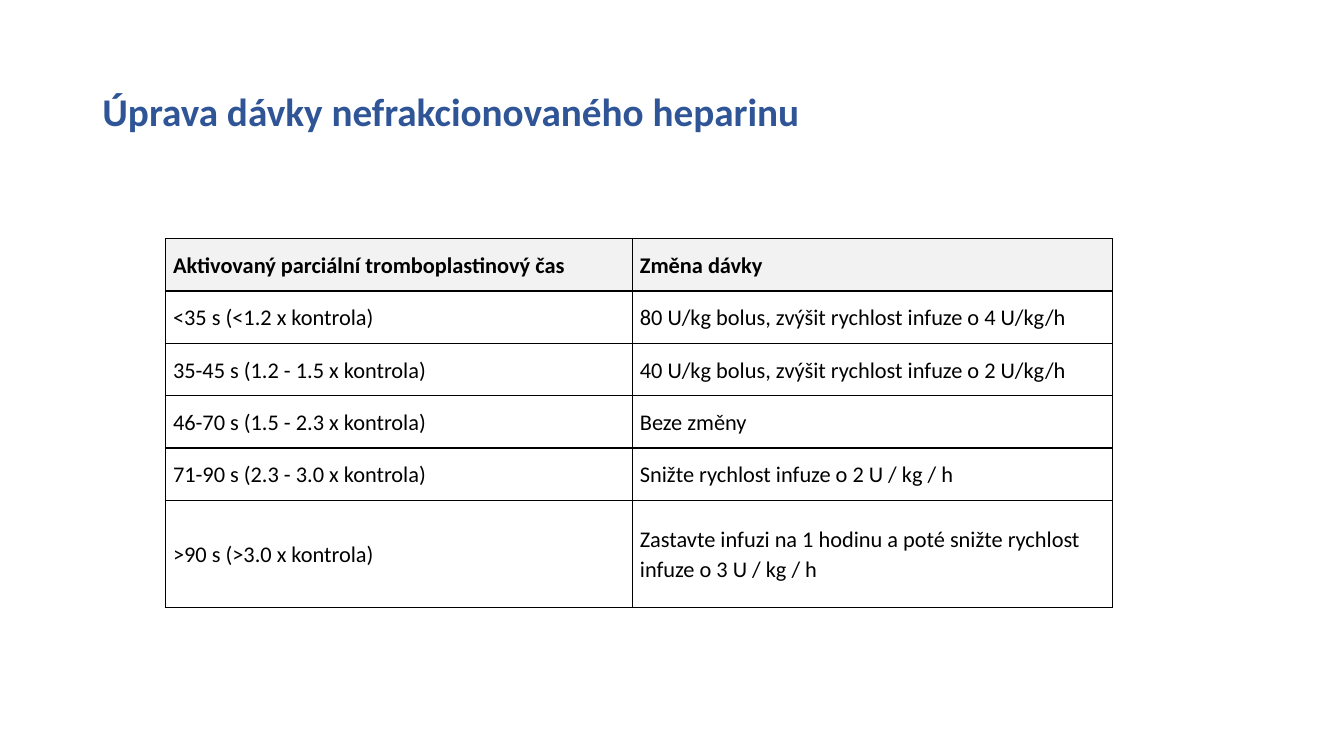
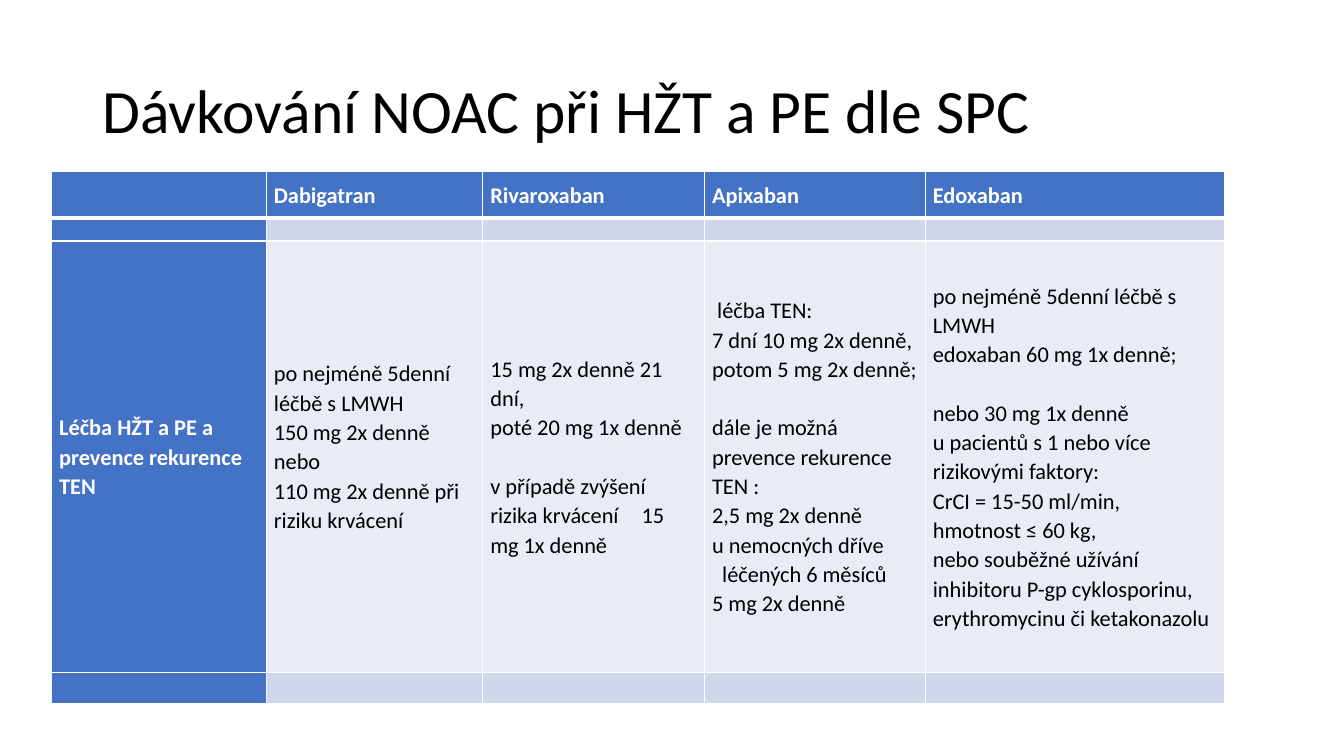
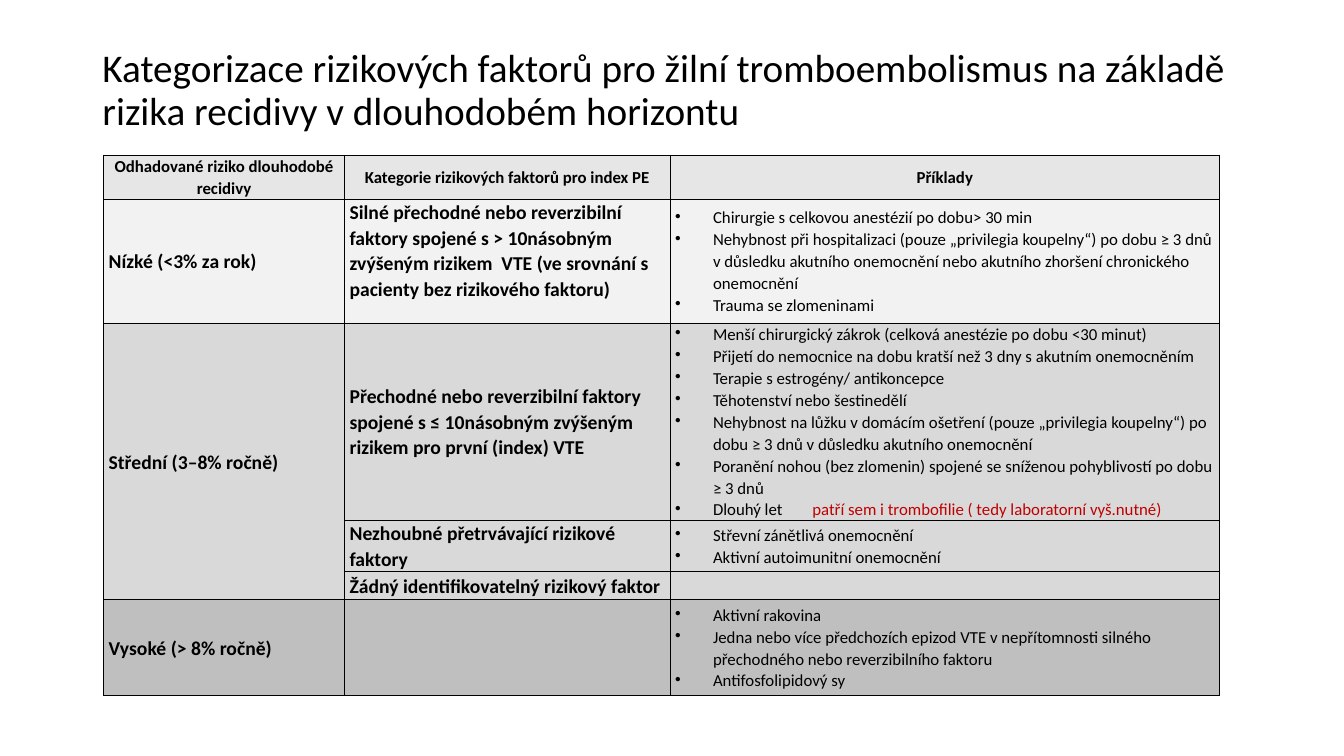
from dataclasses import dataclass

from lxml import etree
from pptx import Presentation
from pptx.dml import color
from pptx.enum import text
from pptx.oxml import ns
from pptx.util import Pt

FONT = "Calibri"
BLACK, WHITE, RED = "000000", "FFFFFF", "C00000"
NAVY, BLUE, BAND, PALE = "2F5597", "4472C4", "CFD5EA", "E9EBF5"
HEAD_GRAY, LOW, MEDIUM, HIGH = "E7E6E6", "F2F2F2", "D9D9D9", "BFBFBF"
LINE_GAP = 20.9
HANG = 27


@dataclass(frozen=True)
class Para:
    text: str
    before: float = 0
    indent: float = 0
    tab: float = 0
    bullet: bool = False
    accent: str = ""


@dataclass(frozen=True)
class Cell:
    paras: tuple[Para, ...] = ()
    fill: str = ""
    size: float = 16
    bold: bool = False
    color: str = BLACK
    centered: bool = False
    bottom: float = 0
    rule: float = 1


@dataclass(frozen=True)
class Grid:
    left: float
    top: float
    cols: tuple[float, ...]
    rows: tuple[float, ...]
    inset: float
    border: str
    cells: list[list[Cell]]


@dataclass(frozen=True)
class Title:
    text: str
    size: float = 28
    color: str = BLACK
    bold: bool = False
    height: float = 104.4


def rgb(value: str) -> color.RGBColor:
    return color.RGBColor.from_string(value)


def paras(*lines: str) -> tuple[Para, ...]:
    return tuple(Para(line) for line in lines)


def bullets(*lines: str) -> tuple[Para, ...]:
    return tuple(Para(line, indent=HANG, bullet=True) for line in lines)


def add_run(p, words: str, size: float, bold: bool, ink: str) -> None:
    r = p.add_run()
    r.text = words
    r.font.name = FONT
    r.font.size = Pt(size)
    r.font.bold = bold
    r.font.color.rgb = rgb(ink)


def child(parent, tag: str, **attrs):
    return etree.SubElement(parent, ns.qn(tag), {k: str(v) for k, v in attrs.items()})


def add_para(p, para: Para, cell: Cell) -> None:
    p.line_spacing = 1.07
    p.space_before = Pt(para.before)
    p.alignment = text.PP_ALIGN.CENTER if cell.centered else text.PP_ALIGN.LEFT
    pPr = p._p.get_or_add_pPr()
    pPr.set("marL", str(Pt(para.indent)))
    pPr.set("indent", str(Pt(-para.indent if para.bullet else 0)))
    if para.bullet:
        child(pPr, "a:buChar", char="•")
    if para.tab:
        child(child(pPr, "a:tabLst"), "a:tab", pos=Pt(para.tab), algn="l")
    add_run(p, para.text, cell.size, cell.bold, cell.color)
    if para.accent:
        add_run(p, para.accent, cell.size, cell.bold, RED)


def add_borders(target, ink: str, top: float, bottom: float) -> None:
    tcPr = target._tc.get_or_add_tcPr()
    sides = (("a:lnL", 1), ("a:lnR", 1), ("a:lnT", top), ("a:lnB", bottom))
    for i, (tag, width) in enumerate(sides):
        ln = child(tcPr, tag, w=Pt(width))
        child(child(ln, "a:solidFill"), "a:srgbClr", val=ink)
        tcPr.insert(i, ln)


def fill_cell(target, cell: Cell, grid: Grid, top: float) -> None:
    target.margin_left = target.margin_right = Pt(grid.inset)
    target.margin_top, target.margin_bottom = Pt(0), Pt(cell.bottom)
    target.vertical_anchor = text.MSO_ANCHOR.MIDDLE
    if cell.fill:
        target.fill.solid()
        target.fill.fore_color.rgb = rgb(cell.fill)
    else:
        target.fill.background()
    add_borders(target, grid.border, top, cell.rule)
    tf = target.text_frame
    for i, para in enumerate(cell.paras):
        add_para(tf.add_paragraph() if i else tf.paragraphs[0], para, cell)
    if not cell.paras:
        child(tf.paragraphs[0]._p, "a:endParaRPr", sz=1100)


def add_grid(s, grid: Grid):
    frame = s.shapes.add_table(len(grid.rows), len(grid.cols), Pt(grid.left), Pt(grid.top),
                               Pt(sum(grid.cols)), Pt(sum(grid.rows)))
    table = frame.table
    table.first_row = table.horz_banding = False
    for column, width in zip(table.columns, grid.cols):
        column.width = Pt(width)
    for row, height in zip(table.rows, grid.rows):
        row.height = Pt(height)
    for i, line in enumerate(grid.cells):
        for j, cell in enumerate(line):
            fill_cell(table.cell(i, j), cell, grid, grid.cells[i - 1][j].rule if i else 1)
    return table


def add_slide(prs, title: Title):
    s = prs.slides.add_slide(prs.slide_layouts[5])
    sp = s.shapes.title
    sp.left, sp.top, sp.width, sp.height = Pt(66), Pt(28.8), Pt(828), Pt(title.height)
    tf = sp.text_frame
    tf.word_wrap = True
    tf.auto_size = text.MSO_AUTO_SIZE.NONE
    tf.vertical_anchor = text.MSO_ANCHOR.MIDDLE
    p = tf.paragraphs[0]
    p.alignment = text.PP_ALIGN.LEFT
    p.line_spacing = 0.9
    add_run(p, title.text, title.size, title.bold, title.color)
    return s


def heparin_slide(prs) -> None:
    s = add_slide(prs, Title("Úprava dávky nefrakcionovaného heparinu", color=NAVY, bold=True))
    header = ("Aktivovaný parciální tromboplastinový čas", "Změna dávky")
    doses = (
        ("<35 s (<1.2 x kontrola)", "80 U/kg bolus, zvýšit rychlost infuze o 4 U/kg/h"),
        ("35-45 s (1.2 - 1.5 x kontrola)", "40 U/kg bolus, zvýšit rychlost infuze o 2 U/kg/h"),
        ("46-70 s (1.5 - 2.3 x kontrola)", "Beze změny"),
        ("71-90 s (2.3 - 3.0 x kontrola)", "Snižte rychlost infuze o 2 U / kg / h"),
        (">90 s (>3.0 x kontrola)",
         "Zastavte infuzi na 1 hodinu a poté snižte rychlost infuze o 3 U / kg / h"),
    )
    cells = [[Cell(paras(t), LOW, bold=True) for t in header]]
    cells += [[Cell(paras(t)) for t in dose] for dose in doses]
    add_grid(s, Grid(118.2, 170.5, (333.5, 342.8), (37.4,) * 5 + (76.3,), 5.4, BLACK, cells))


def noac_slide(prs) -> None:
    s = add_slide(prs, Title("Dávkování NOAC při HŽT a PE dle SPC", size=44))
    names = ("Dabigatran", "Rivaroxaban", "Apixaban", "Edoxaban")
    dabigatran = paras("po nejméně 5denní léčbě s LMWH", "150 mg 2x denně", "nebo",
                       "110 mg 2x denně při riziku krvácení")
    rivaroxaban = (
        *paras("15 mg 2x denně 21 dní,", "poté 20 mg 1x denně"),
        Para("v případě zvýšení rizika krvácení\t15 mg 1x denně", before=LINE_GAP, tab=130),
    )
    apixaban = (
        Para("léčba TEN:", indent=3.6),
        Para("7 dní 10 mg 2x denně, potom 5 mg 2x denně;"),
        Para("dále je možná prevence rekurence TEN :", before=LINE_GAP),
        *paras("2,5 mg 2x denně", "u nemocných dříve"),
        Para("léčených 6 měsíců", indent=7.2),
        Para("5 mg 2x denně"),
    )
    edoxaban = (
        *paras("po nejméně 5denní léčbě s LMWH", "edoxaban 60 mg 1x denně;"),
        Para("nebo 30 mg 1x denně", before=LINE_GAP),
        *paras("u pacientů s 1 nebo více rizikovými faktory:", "CrCI = 15-50 ml/min,",
               "hmotnost ≤ 60 kg,", "nebo souběžné užívání inhibitoru P-gp cyklosporinu,",
               "erythromycinu či ketakonazolu"),
    )
    header = [Cell(fill=BLUE, rule=3)]
    header += [Cell(paras(n), BLUE, bold=True, color=WHITE, rule=3) for n in names]
    spacer = [Cell(fill=BLUE)] + [Cell(fill=BAND)] * len(names)
    treatment = [
        Cell(paras("Léčba HŽT a PE a prevence rekurence TEN"), BLUE, bold=True, color=WHITE),
        Cell(dabigatran, PALE, bottom=14.4),
        *(Cell(regimen, PALE) for regimen in (rivaroxaban, apixaban, edoxaban)),
    ]
    add_grid(s, Grid(36.9, 122.6, (153.4, 154.6, 158.4, 157.7, 213.8), (33, 16.6, 308, 22.4),
                     5.4, WHITE, [header, spacer, treatment, spacer]))


def risk_slide(prs) -> None:
    s = add_slide(prs, Title("Kategorizace rizikových faktorů pro žilní tromboembolismus "
                             "na základě rizika recidivy v dlouhodobém horizontu", height=73))
    header = ("Odhadované riziko dlouhodobé recidivy",
              "Kategorie rizikových faktorů pro index PE", "Příklady")
    strong = ("Silné přechodné nebo reverzibilní faktory spojené s > 10násobným zvýšeným "
              "rizikem  VTE (ve srovnání s pacienty bez rizikového faktoru)")
    weak = ("Přechodné nebo reverzibilní faktory spojené s ≤ 10násobným zvýšeným "
            "rizikem pro první (index) VTE")
    strong_examples = bullets(
        "Chirurgie s celkovou anestézií po dobu> 30 min",
        "Nehybnost při hospitalizaci (pouze „privilegia koupelny“) po dobu ≥ 3 dnů v důsledku "
        "akutního onemocnění nebo akutního zhoršení chronického onemocnění",
        "Trauma se zlomeninami")
    weak_examples = bullets(
        "Menší chirurgický zákrok (celková anestézie po dobu <30 minut)",
        "Přijetí do nemocnice na dobu kratší než 3 dny s akutním onemocněním",
        "Terapie s estrogény/ antikoncepce",
        "Těhotenství nebo šestinedělí",
        "Nehybnost na lůžku v domácím ošetření (pouze „privilegia koupelny“) po dobu ≥ 3 dnů "
        "v důsledku akutního onemocnění",
        "Poranění nohou (bez zlomenin) spojené se sníženou pohyblivostí po dobu ≥ 3 dnů")
    flight = Para("Dlouhý let\t", indent=HANG, tab=98, bullet=True,
                  accent="patří sem i trombofilie ( tedy laboratorní vyš.nutné)")
    lasting_examples = bullets("Střevní zánětlivá onemocnění", "Aktivní autoimunitní onemocnění")
    high_examples = bullets(
        "Aktivní rakovina",
        "Jedna nebo více předchozích epizod VTE v nepřítomnosti silného přechodného nebo "
        "reverzibilního faktoru",
        "Antifosfolipidový sy")
    levels = (
        (LOW, "Nízké (<3% za rok)", strong, strong_examples, 15.6),
        (MEDIUM, "Střední (3–8% ročně)", weak, (*weak_examples, flight), 0),
        (MEDIUM, "", "Nezhoubné přetrvávající rizikové faktory", lasting_examples, 0),
        (MEDIUM, "", "Žádný identifikovatelný rizikový faktor", (), 0),
        (HIGH, "Vysoké (> 8% ročně)", "", high_examples, 0),
    )
    cells = [[Cell(paras(t), HEAD_GRAY, 12, True, centered=True) for t in header]]
    for fill, level, category, examples, bottom in levels:
        cells.append([
            Cell(paras(level) if level else (), fill, 14, True),
            Cell(paras(category) if category else (), fill, 14, True, bottom=bottom),
            Cell(examples, fill, 12),
        ])
    table = add_grid(s, Grid(74, 110.8, (172.1, 232.6, 392.4),
                             (31.6, 88.4, 140.6, 36.4, 20.2, 68.4), 3.6, BLACK, cells))
    table.cell(2, 0).merge(table.cell(4, 0))


def main() -> None:
    prs = Presentation()
    prs.slide_width, prs.slide_height = Pt(960), Pt(540)
    heparin_slide(prs)
    noac_slide(prs)
    risk_slide(prs)
    prs.save("out.pptx")


if __name__ == "__main__":
    main()
